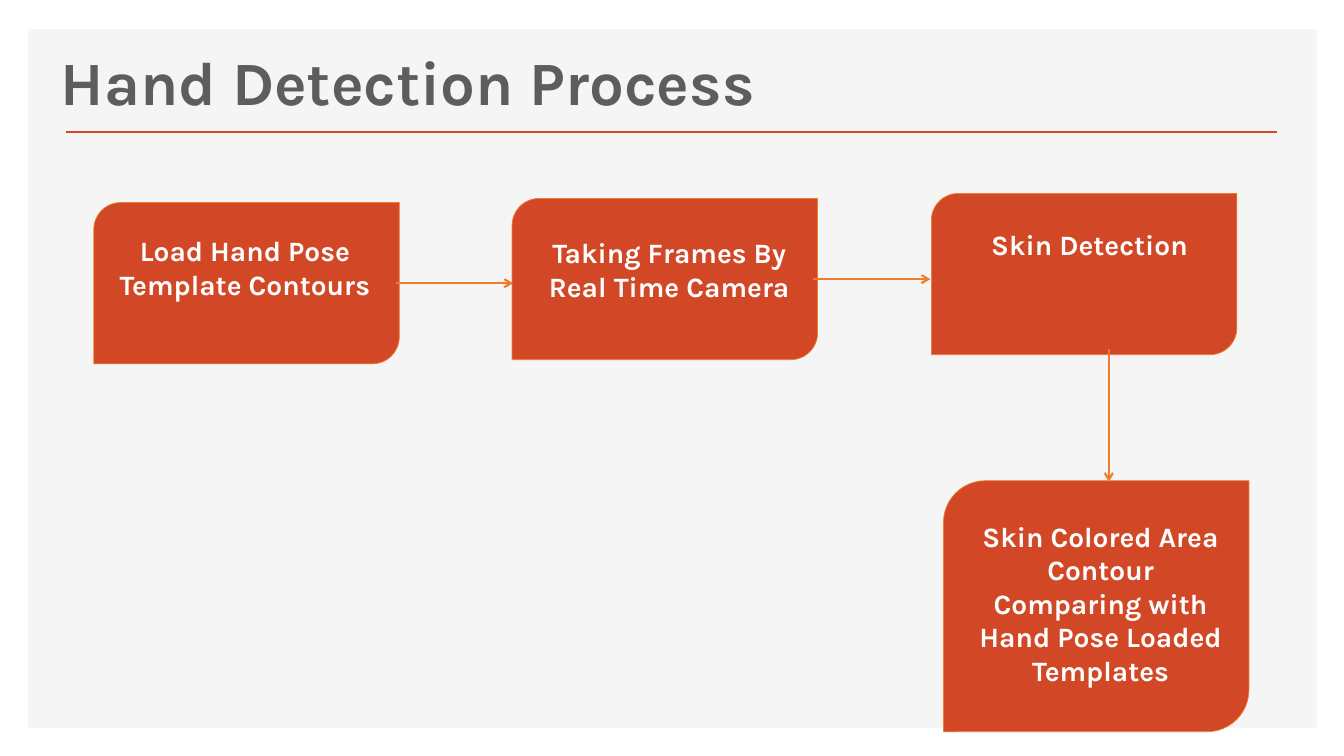
from lxml.etree import SubElement
from pptx import Presentation
from pptx.dml.color import RGBColor as Color
from pptx.enum.shapes import MSO_CONNECTOR as Link, MSO_SHAPE as Form
from pptx.enum.text import MSO_AUTO_SIZE as Fit, PP_ALIGN as Align
from pptx.oxml.ns import qn
from pptx.util import Pt

RED = Color(0xD2, 0x47, 0x26)
ORANGE = Color(0xED, 0x7D, 0x31)
GRAY = Color(0x5D, 0x5D, 0x5D)
PALE = Color(0xF5, 0xF5, 0xF5)
WHITE = Color(0xFF, 0xFF, 0xFF)
FACE = "Karla"
STEP_W = 218.2
TEXT_W = 194.4

STEPS = [
    ((67, 144.7, 115.2), (10.8, 18.7, 55.4), ["Load Hand Pose", "Template Contours"]),
    ((365.8, 141.8, 115.2), (15.1, 23, 55.4), ["Taking Frames By Real Time Camera"]),
    ((665.3, 138.2, 115.2), (15.8, 20.9, 31.7), ["Skin Detection"]),
    ((673.9, 343.4, 179.3), (15.1, 23.8, 128.2),
     ["Skin Colored Area", "Contour Comparing with Hand Pose Loaded Templates"]),
]
ARROWS = [
    (283, 202.3, 366.5, 202.3),
    (581, 199.4, 664.6, 199.4),
    (792, 249.1, 792, 344.2),
]


def add_form(slide, form, box, fill, edge=None):
    """Draw a filled preset shape, with a thin edge if a colour is given."""
    shape = slide.shapes.add_shape(form, *map(Pt, box))
    shape.shadow.inherit = False
    shape.fill.solid()
    shape.fill.fore_color.rgb = fill
    if edge is None:
        shape.line.fill.background()
    else:
        shape.line.color.rgb = edge
        shape.line.width = Pt(0.5)


def add_text(slide, box, lines, size, color, wrap=True):
    """Write centred bold paragraphs in a text box."""
    frame = slide.shapes.add_textbox(*map(Pt, box)).text_frame
    frame.word_wrap = wrap
    frame.auto_size = Fit.SHAPE_TO_FIT_TEXT
    frame.text = "\n".join(lines)
    for para in frame.paragraphs:
        para.alignment = Align.CENTER
        font = para.font
        font.name, font.size, font.bold = FACE, Pt(size), True
        font.color.rgb = color


def add_line(slide, ends, color, width, arrow=False):
    """Draw a straight line, with an open arrowhead at its end if asked."""
    line = slide.shapes.add_connector(Link.STRAIGHT, *map(Pt, ends))
    line.line.color.rgb = color
    line.line.width = Pt(width)
    if arrow:
        SubElement(line.line._get_or_add_ln(), qn("a:tailEnd"), type="arrow")
    SubElement(line._element.spPr, qn("a:effectLst"))


def add_head(slide, box):
    """Draw the panel with its title and rule."""
    left, top, width, height = box
    add_form(slide, Form.RECTANGLE, box, PALE)
    rule = top + 73.4
    add_line(slide, (left + 27.3, rule, left + width - 28, rule), RED, 2)
    add_text(slide, (left + 15.8, top + 7.2, 511.2, 60.5),
             ["Hand Detection Process"], 44, GRAY, wrap=False)


def add_step(slide, box, inset, lines):
    """Draw one step of the process with its label inside."""
    left, top, height = box
    right, down, tall = inset
    add_form(slide, Form.ROUND_2_DIAG_RECTANGLE,
             (left, top, STEP_W, height), RED, ORANGE)
    add_text(slide, (left + right, top + down, TEXT_W, tall), lines, 20, WHITE)


def main():
    """Build the slide and save it."""
    deck = Presentation()
    deck.slide_width, deck.slide_height = Pt(960), Pt(540)
    slide = deck.slides.add_slide(deck.slide_layouts[6])
    add_head(slide, (20.2, 20.9, 920.2, 499))
    for step in STEPS:
        add_step(slide, *step)
    for ends in ARROWS:
        add_line(slide, ends, ORANGE, 1.5, arrow=True)
    deck.save("out.pptx")


if __name__ == "__main__":
    main()
